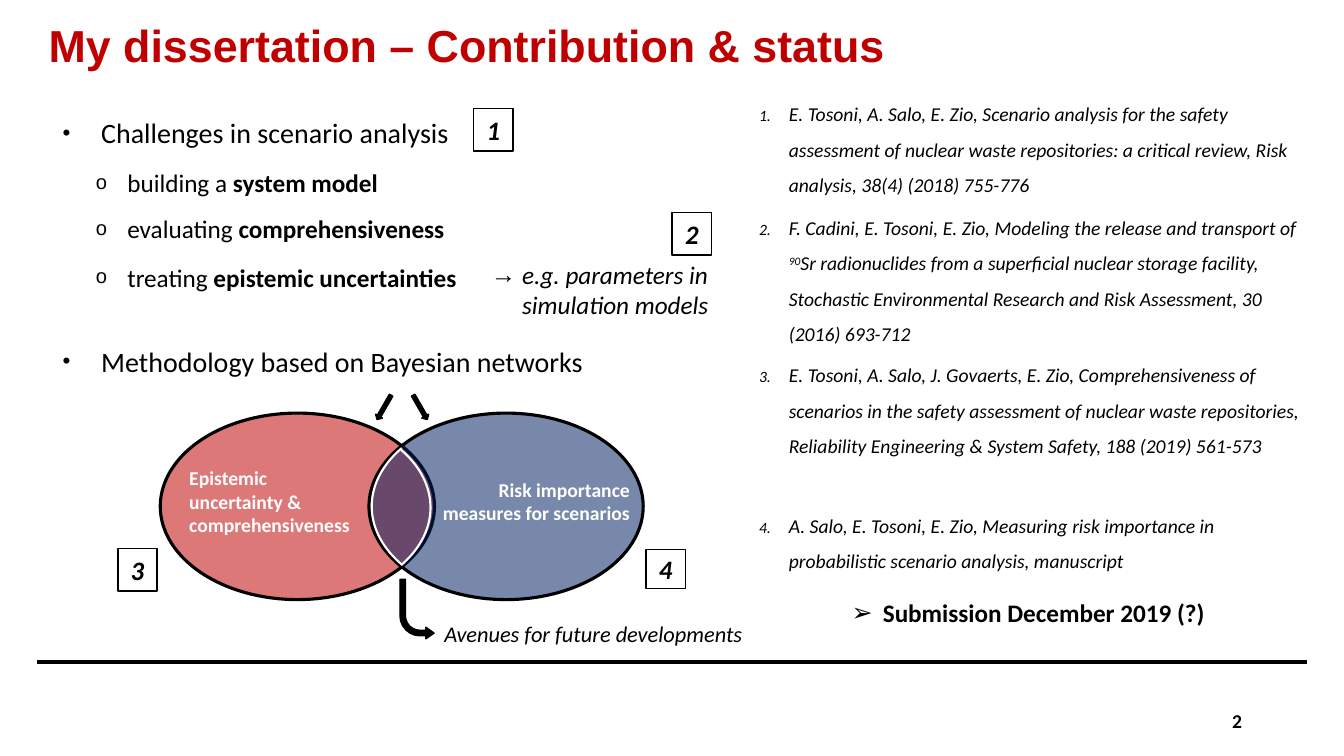
from lxml import etree
from pptx import Presentation
from pptx import util as u
from pptx.dml.color import RGBColor
from pptx.enum import shapes, text
from pptx.oxml import ns

BLACK = RGBColor(0x00, 0x00, 0x00)
WHITE = RGBColor(0xFF, 0xFF, 0xFF)
RED = RGBColor(0xC0, 0x00, 0x00)
NAVY = RGBColor(0x00, 0x20, 0x60)

TOP, MIDDLE = text.MSO_ANCHOR.TOP, text.MSO_ANCHOR.MIDDLE
LEFT, CENTER, RIGHT = text.PP_ALIGN.LEFT, text.PP_ALIGN.CENTER, text.PP_ALIGN.RIGHT
SHAPE = shapes.MSO_SHAPE

TIGHT = {"margin_left": u.Cm(0.18), "margin_right": u.Cm(0.18),
         "margin_top": u.Cm(0.1), "margin_bottom": u.Cm(0.1),
         "vertical_anchor": TOP}
CENTRED = {"vertical_anchor": MIDDLE}
LOOSE_LINES = {"line_spacing": 1.5}

REFERENCES = [
    (2.18, 2.9, ["E. Tosoni, A. Salo, E. Zio, Scenario analysis for the safety assessment of "
                 "nuclear waste repositories: a critical review, Risk analysis, 38(4) (2018) 755-776"]),
    (5.05, 3.71, ["F. Cadini, E. Tosoni, E. Zio, Modeling the release and transport of ",
                  ("90", "super"),
                  "Sr radionuclides from a superficial nuclear storage facility, Stochastic "
                  "Environmental Research and Risk Assessment, 30 (2016) 693-712"]),
    (8.76, 3.81, ["E. Tosoni, A. Salo, J. Govaerts, E. Zio, Comprehensiveness of scenarios in the "
                  "safety assessment of nuclear waste repositories, Reliability Engineering & "
                  "System Safety, 188 (2019) 561-573"]),
    (12.55, 1.91, ["A. Salo, E. Tosoni, E. Zio, Measuring risk importance in probabilistic "
                   "scenario analysis, manuscript"]),
]
CHALLENGES = [
    (3.73, "building a ", "system model"),
    (4.9, "evaluating ", "comprehensiveness"),
    (6.12, "treating ", "epistemic uncertainties"),
]
BADGES = [
    ("4", 16.28, 13.84, 0.99),
    ("3", 2.97, 13.82, 1.07),
    ("2", 16.94, 5.36, 1.07),
    ("1", 11.94, 2.74, 1.07),
]


def apply(target, values):
    for name, value in values.items():
        setattr(target, name, value)


def font_format(size, color=BLACK, name="Calibri", bold=False, italic=False):
    return {"size": u.Pt(size), "name": name, "bold": bold, "italic": italic}, color


def add_child(parent, tag, **attributes):
    return etree.SubElement(parent, ns.qn(tag), attributes)


def add_bullet(paragraph, mark, indent, hanging, size=None):
    properties = paragraph._p.get_or_add_pPr()
    properties.set("marL", str(u.Cm(indent)))
    properties.set("indent", str(-u.Cm(hanging)))
    if size:
        add_child(properties, "a:buSzPct", val=str(size * 1000))
    if isinstance(mark, int):
        add_child(properties, "a:buAutoNum", type="arabicPeriod", startAt=str(mark))
    else:
        add_child(properties, "a:buFont", typeface="Arial")
        add_child(properties, "a:buChar", char=mark)


def write(frame, pieces, style, frame_format=CENTRED, paragraph_format=None, bullet=None):
    apply(frame, {"word_wrap": True, "auto_size": text.MSO_AUTO_SIZE.NONE, **frame_format})
    paragraph = frame.paragraphs[0]
    apply(paragraph, paragraph_format or {})
    if bullet:
        add_bullet(paragraph, *bullet)
    values, color = style
    for piece in pieces:
        words, effect = piece if isinstance(piece, tuple) else (piece, None)
        run = paragraph.add_run()
        run.text = words
        apply(run.font, values)
        run.font.color.rgb = color
        if effect == "bold":
            run.font.bold = True
        elif effect == "super":
            run.font._element.set("baseline", "30000")


def add_text(slide, box, *content, **formats):
    shape = slide.shapes.add_textbox(*map(u.Cm, box))
    write(shape.text_frame, *content, **formats)


def add_figure(slide, kind, box, fill=None, line=BLACK, width=1, opacity=None,
               adjustments=(), rotation=0, flip=None):
    shape = slide.shapes.add_shape(kind, *map(u.Cm, box))
    shape.shadow.inherit = False
    shape.rotation = rotation
    for index, value in enumerate(adjustments):
        shape.adjustments[index] = value
    if fill is None:
        shape.fill.background()
    else:
        shape.fill.solid()
        shape.fill.fore_color.rgb = fill
    if opacity:
        color = shape._element.spPr.find(".//" + ns.qn("a:srgbClr"))
        add_child(color, "a:alpha", val=str(opacity * 1000))
    shape.line.color.rgb = line
    shape.line.width = u.Pt(width)
    if flip:
        shape._element.spPr.xfrm.set(flip, "1")
    return shape


def add_badge(slide, label, left, top, height):
    shape = add_figure(slide, SHAPE.RECTANGLE, (left, top, 0.99, height), WHITE)
    write(shape.text_frame, [label], font_format(19, bold=True, italic=True),
          paragraph_format={"alignment": CENTER})


def add_rule(slide):
    rule = slide.shapes.add_connector(shapes.MSO_CONNECTOR.STRAIGHT, u.Cm(0.94), u.Cm(16.69),
                                      u.Cm(32.94), u.Cm(16.69))
    rule.line.color.rgb = BLACK
    rule.line.width = u.Pt(3)
    add_child(rule._element.spPr, "a:effectLst")


def add_title(slide, words):
    title = slide.shapes.title
    apply(title, {"left": u.Cm(0.97), "top": u.Cm(0.33),
                  "width": u.Cm(31.95), "height": u.Cm(1.55)})
    write(title.text_frame, [words], font_format(32, RED, "Arial", bold=True),
          {"vertical_anchor": TOP}, {"alignment": LEFT})


def add_topic(slide, top, height, words):
    add_text(slide, (1.4, top, 17.98, height), [words], font_format(20), TIGHT, LOOSE_LINES,
             bullet=("•", 0.97, 0.97, 80))


def add_venn(slide):
    for left, color in ((4.04, RED), (9.3, NAVY)):
        add_figure(slide, SHAPE.OVAL, (left, 10.41, 6.91, 4.7), color, width=2.25, opacity=53)
    for left, angle in ((9.58, 30), (10.49, 330)):
        add_figure(slide, SHAPE.DOWN_ARROW, (left, 9.91, 0.2, 0.71), BLACK, rotation=angle)
    label = font_format(14, WHITE, bold=True)
    add_text(slide, (4.52, 11.61, 4.88, 2.06), ["Epistemic uncertainty & comprehensiveness"], label)
    add_text(slide, (10.77, 11.91, 5.36, 1.45), ["Risk importance measures for scenarios"], label,
             paragraph_format={"alignment": RIGHT})
    for left, top, start, flip in ((9.37, 10.41, 90.71, None), (3.94, 10.44, 91.15, "flipH")):
        add_figure(slide, SHAPE.ARC, (left, top, 6.91, 4.7), line=WHITE, width=1.5,
                   adjustments=(start, 125.13), flip=flip)
    add_text(slide, (10.95, 15.49, 8.26, 0.94), ["Avenues for future developments"],
             font_format(16, italic=True))
    add_figure(slide, SHAPE.BENT_ARROW, (10.08, 14.6, 0.86, 1.5), BLACK,
               adjustments=(0.16, 0.17, 0.24, 0.59), flip="flipV")


def main():
    presentation = Presentation()
    apply(presentation, {"slide_width": u.Cm(33.87), "slide_height": u.Cm(19.05)})
    slide = presentation.slides.add_slide(presentation.slide_layouts[5])
    add_rule(slide)
    add_text(slide, (23.93, 17.65, 7.62, 1.02), ["2"], font_format(14, bold=True),
             paragraph_format={"alignment": RIGHT})
    add_title(slide, "My dissertation – Contribution & status")
    for number, (top, height, pieces) in enumerate(REFERENCES, 1):
        add_text(slide, (18.95, top, 14, height), pieces, font_format(14, italic=True),
                 TIGHT, LOOSE_LINES, bullet=(number, 0.75, 0.75, 80))
    add_topic(slide, 2.39, 1.35, "Challenges in scenario analysis")
    for top, action, subject in CHALLENGES:
        add_text(slide, (0.97, top, 17.98, 1.22), [action, (subject, "bold")], font_format(18),
                 TIGHT, {"level": 1, **LOOSE_LINES}, bullet=("o", 2.06, 0.79, 80))
    add_text(slide, (12.12, 6.1, 6.6, 2.39), ["e.g. parameters in simulation models"],
             font_format(18, italic=True), bullet=("→", 0.79, 0.79))
    add_topic(slide, 8.15, 1.47, "Methodology based on Bayesian networks")
    add_venn(slide)
    for badge in BADGES:
        add_badge(slide, *badge)
    add_text(slide, (21.21, 14.53, 9.5, 1.8), ["Submission December 2019 (?)"],
             font_format(18, bold=True), bullet=("➢", 0.79, 0.79))
    presentation.save("out.pptx")


if __name__ == "__main__":
    main()
